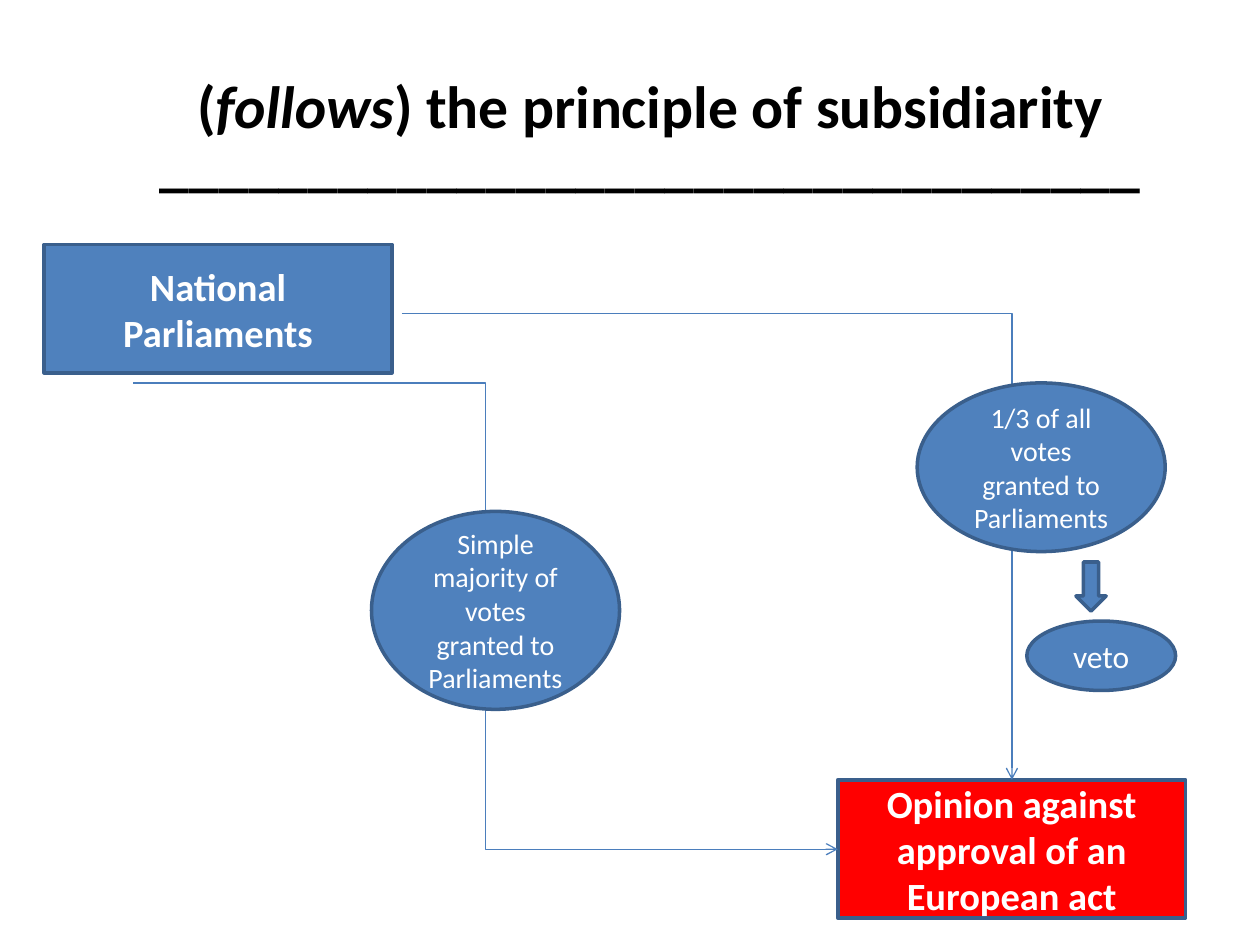
from typing import NamedTuple

from lxml import etree
from pptx import Presentation
from pptx import util as u
from pptx.dml.color import RGBColor
from pptx.enum import shapes, text
from pptx.oxml.ns import qn

BLUE = RGBColor(0x4F, 0x81, 0xBD)
OUTLINE = RGBColor(0x3A, 0x5F, 0x8C)
CONNECTOR = RGBColor(0x4B, 0x7E, 0xBC)
RED = RGBColor(0xFF, 0, 0)
WHITE = RGBColor(0xFF, 0xFF, 0xFF)
BLACK = RGBColor(0, 0, 0)
FONT = "Calibri"
KIND = shapes.MSO_SHAPE


class Node(NamedTuple):
    kind: KIND
    left: float
    top: float
    width: float
    height: float
    words: str = ""
    size: float = 16
    bold: bool = False
    fill: RGBColor = BLUE


class Route(NamedTuple):
    start: tuple[float, float]
    end: tuple[float, float]
    preset: str


ACTORS = [
    Node(KIND.RECTANGLE, 0.89, 4.93, 7.01, 2.59, "National Parliaments", 22, True),
    Node(KIND.RECTANGLE, 16.89, 15.72, 7.01, 2.79,
         "Opinion against approval of an European act", 22, True, RED),
]
ROUTES = [
    Route((8.1, 6.32), (20.4, 15.72), "bentConnector2"),
    Route((2.69, 7.72), (16.89, 17.12), "bentConnector3"),
]
CONDITIONS = [
    Node(KIND.OVAL, 18.49, 7.72, 5, 3.4, "1/3 of all votes granted to Parliaments"),
    Node(KIND.OVAL, 7.49, 10.31, 5, 3.99,
         "Simple majority of votes granted to Parliaments"),
    Node(KIND.OVAL, 20.7, 12.52, 3, 1.4, "veto", 18),
    Node(KIND.DOWN_ARROW, 21.69, 11.33, 0.61, 0.99),
]


def add_span(para, words: str, size: float, color: RGBColor,
             bold: bool = False, italic: bool = False) -> None:
    span = para.add_run()
    span.text = words
    span.font.name = FONT
    span.font.size = u.Pt(size)
    span.font.bold = bold
    span.font.italic = italic
    span.font.color.rgb = color


def write_title(title) -> None:
    title.left, title.top = u.Cm(2.31), u.Cm(0.91)
    title.width, title.height = u.Cm(21.59), u.Cm(3.81)
    frame = title.text_frame
    frame.word_wrap = True
    frame.auto_size = text.MSO_AUTO_SIZE.NONE
    frame.vertical_anchor = text.MSO_ANCHOR.MIDDLE
    para = frame.paragraphs[0]
    para.alignment = text.PP_ALIGN.CENTER
    para.line_spacing = 0.8
    add_span(para, "(", 34.1, BLACK, bold=True)
    add_span(para, "follows", 34.1, BLACK, bold=True, italic=True)
    add_span(para, ") the principle of subsidiarity " + "_" * 33, 34.1, BLACK, bold=True)


def add_node(slide, node: Node) -> None:
    box = slide.shapes.add_shape(node.kind, u.Cm(node.left), u.Cm(node.top),
                                 u.Cm(node.width), u.Cm(node.height))
    box.shadow.inherit = False
    box.fill.solid()
    box.fill.fore_color.rgb = node.fill
    box.line.color.rgb = OUTLINE
    box.line.width = u.Pt(2)
    if node.words:
        frame = box.text_frame
        frame.word_wrap = True
        frame.vertical_anchor = text.MSO_ANCHOR.MIDDLE
        para = frame.paragraphs[0]
        para.alignment = text.PP_ALIGN.CENTER
        add_span(para, node.words, node.size, WHITE, node.bold)


def add_route(slide, route: Route) -> None:
    """Draw an elbow connector with an open arrowhead at its end."""
    start_x, start_y = route.start
    end_x, end_y = route.end
    connector = slide.shapes.add_connector(
        shapes.MSO_CONNECTOR.ELBOW,
        u.Cm(start_x), u.Cm(start_y), u.Cm(end_x), u.Cm(end_y))
    connector.line.color.rgb = CONNECTOR
    connector.line.width = u.Pt(0.75)
    properties = connector._element.spPr
    properties.find(qn("a:prstGeom")).set("prst", route.preset)
    etree.SubElement(properties.find(qn("a:ln")), qn("a:tailEnd"), type="arrow")
    etree.SubElement(properties, qn("a:effectLst"))


def main() -> None:
    deck = Presentation()
    deck.slide_width, deck.slide_height = u.Cm(25.4), u.Cm(19.05)
    slide = deck.slides.add_slide(deck.slide_layouts.get_by_name("Title Only"))
    write_title(slide.shapes.title)
    for actor in ACTORS:
        add_node(slide, actor)
    for route in ROUTES:
        add_route(slide, route)
    for condition in CONDITIONS:
        add_node(slide, condition)
    deck.save("out.pptx")


if __name__ == "__main__":
    main()
